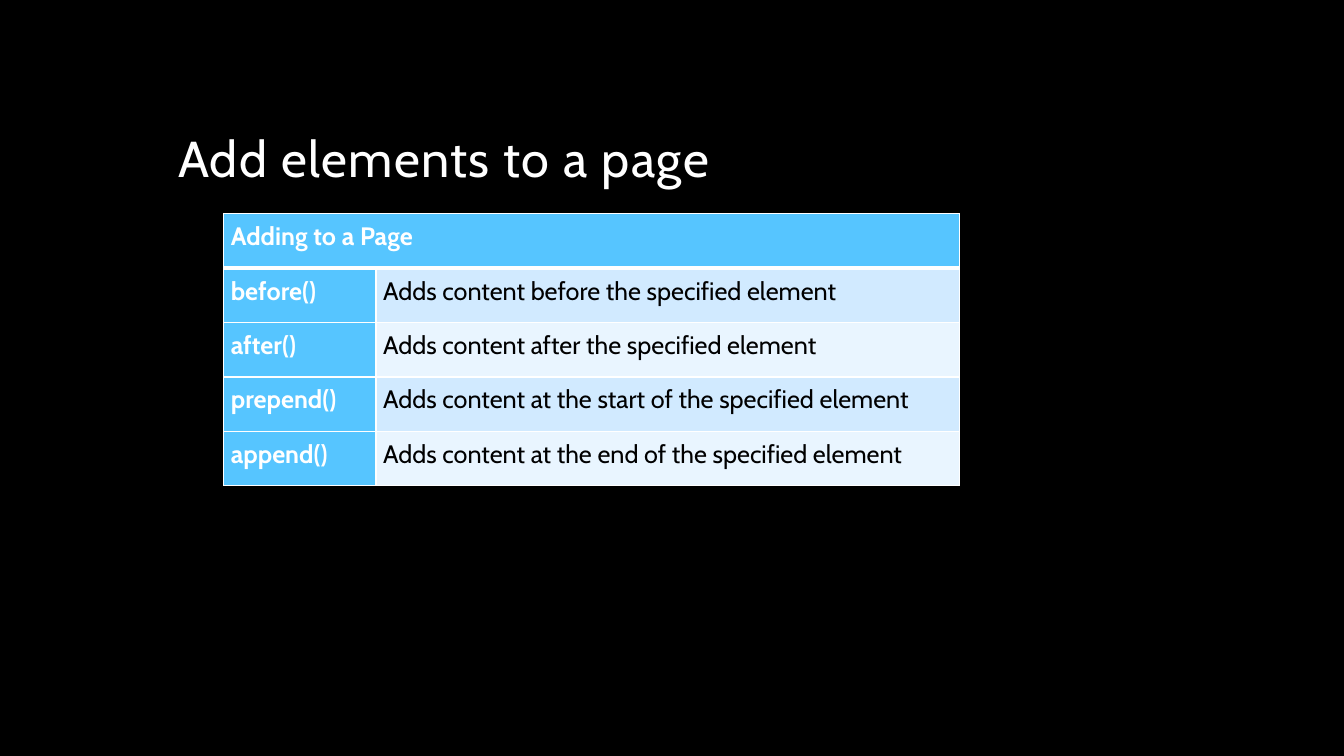
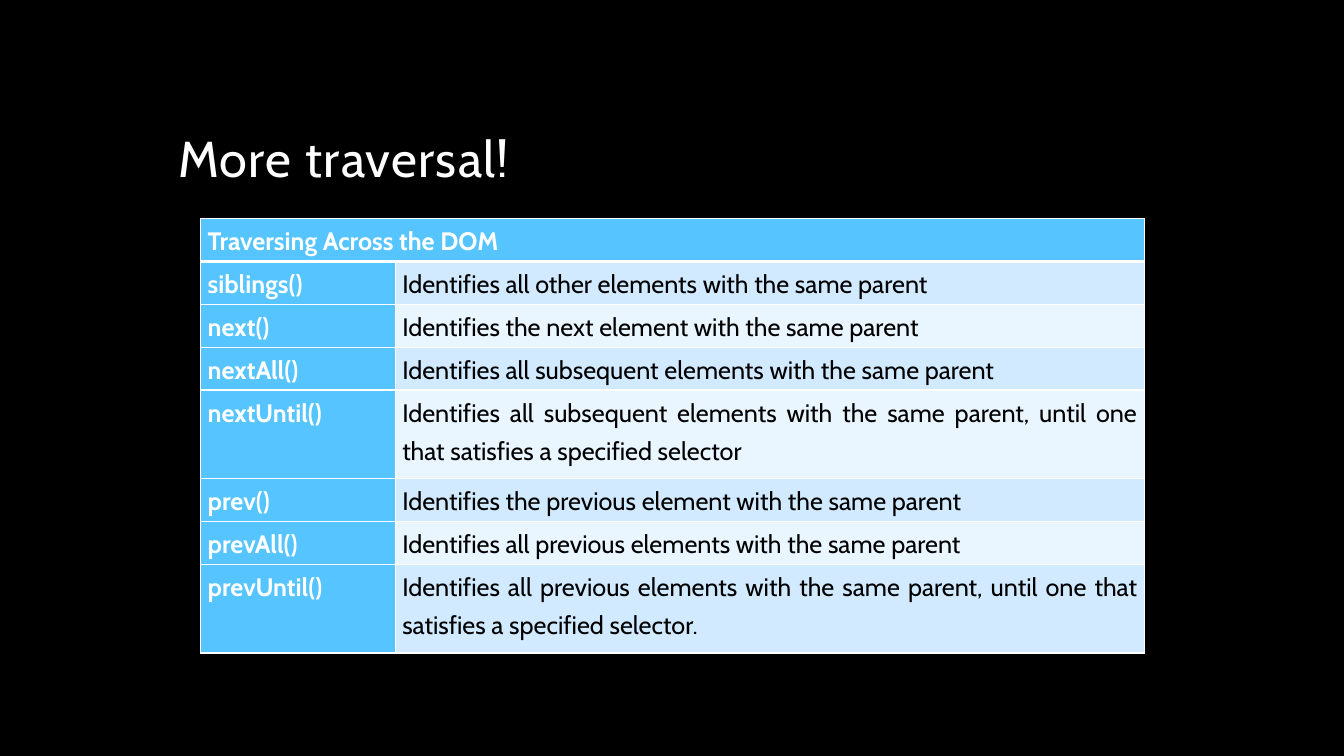
from dataclasses import dataclass

from lxml import etree
from pptx import Presentation
from pptx import util as u
from pptx.dml.color import RGBColor
from pptx.enum import text
from pptx.oxml import ns

FONT = "Cabin"
BLACK = RGBColor(0x00, 0x00, 0x00)
WHITE = RGBColor(0xFF, 0xFF, 0xFF)
BLUE = RGBColor(0x56, 0xC5, 0xFF)
BANDS = (RGBColor(0xD1, 0xEA, 0xFF), RGBColor(0xE9, 0xF5, 0xFF))

SLIDE_WIDTH, SLIDE_HEIGHT = u.Inches(13.33), u.Inches(7.5)
TITLE_ONLY = 5
THIN, THICK = 1, 3  # border widths in points

TITLE_FORMAT = {"name": FONT, "size": u.Pt(36), "bold": False}
LABEL_FORMAT = {"name": FONT, "size": u.Pt(18), "bold": True}
DETAIL_FORMAT = {"name": FONT, "size": u.Pt(18), "bold": False}
CELL_FORMAT = {
    "margin_left": u.Inches(0.07), "margin_right": u.Inches(0.07),
    "margin_top": 0, "margin_bottom": 0,
    "vertical_anchor": text.MSO_ANCHOR.TOP,
}


@dataclass(frozen=True)
class Method:
    name: str
    detail: str
    tall: bool = False


@dataclass(frozen=True)
class TableSlide:
    title: str
    heading: str
    left: float
    top: float
    columns: tuple[float, float]
    row_height: float
    methods: tuple[Method, ...]
    tall_height: float = 0.88


SLIDES = (
    TableSlide(
        "Add elements to a page", "Adding to a Page",
        2.22, 2.12, (1.51, 5.79), 0.54,
        (
            Method("before()", "Adds content before the specified element"),
            Method("after()", "Adds content after the specified element"),
            Method("prepend()", "Adds content at the start of the specified element"),
            Method("append()", "Adds content at the end of the specified element"),
        ),
    ),
    TableSlide(
        "More traversal!", "Traversing Across the DOM",
        1.99, 2.17, (1.93, 7.43), 0.425,
        (
            Method("siblings()", "Identifies all other elements with the same parent"),
            Method("next()", "Identifies the next element with the same parent"),
            Method("nextAll()", "Identifies all subsequent elements with the same parent"),
            Method("nextUntil()", "Identifies all subsequent elements with the same parent, "
                   "until one that satisfies a specified selector", tall=True),
            Method("prev()", "Identifies the previous element with the same parent"),
            Method("prevAll()", "Identifies all previous elements with the same parent"),
            Method("prevUntil()", "Identifies all previous elements with the same parent, "
                   "until one that satisfies a specified selector.", tall=True),
        ),
    ),
)


def apply_format(target, values: dict) -> None:
    for name, value in values.items():
        setattr(target, name, value)


def write(paragraph, words: str, font_format: dict, color: RGBColor):
    run = paragraph.add_run()
    run.text = words
    apply_format(run.font, font_format)
    run.font.color.rgb = color
    return run


def add_title(slide, words: str) -> None:
    title = slide.shapes.title
    apply_format(title, {
        "left": round(SLIDE_WIDTH / 8), "top": round(SLIDE_HEIGHT / 18),
        "width": round(SLIDE_WIDTH * 3 / 4), "height": round(SLIDE_HEIGHT / 5),
    })
    apply_format(title.text_frame, {
        "vertical_anchor": text.MSO_ANCHOR.BOTTOM,
        "auto_size": text.MSO_AUTO_SIZE.NONE, "word_wrap": True,
    })
    paragraph = title.text_frame.paragraphs[0]
    apply_format(paragraph, {"alignment": text.PP_ALIGN.LEFT, "line_spacing": 0.9})
    run = write(paragraph, words, TITLE_FORMAT, WHITE)
    run._r.get_or_add_rPr().set("spc", "100")


def set_borders(cell, top: int, bottom: int) -> None:
    properties = cell._tc.get_or_add_tcPr()
    for side, points in (("L", THIN), ("R", THIN), ("T", top), ("B", bottom)):
        line = etree.SubElement(properties, ns.qn(f"a:ln{side}"), w=str(u.Pt(points)))
        fill = etree.SubElement(line, ns.qn("a:solidFill"))
        etree.SubElement(fill, ns.qn("a:srgbClr"), val=str(WHITE))


def style_cell(cell, row: int, fill: RGBColor) -> None:
    # The heading is set off from the first method by a thick rule
    set_borders(cell, THICK if row == 1 else THIN, THICK if row == 0 else THIN)
    cell.fill.solid()
    cell.fill.fore_color.rgb = fill
    apply_format(cell, CELL_FORMAT)


def write_cell(cell, words: str, font_format: dict, color: RGBColor) -> None:
    paragraph = cell.text_frame.paragraphs[0]
    apply_format(paragraph, {"alignment": text.PP_ALIGN.JUSTIFY, "line_spacing": 1.25})
    write(paragraph, words, font_format, color)


def add_method_table(slide, content: TableSlide) -> None:
    heights = [content.row_height] + [
        content.tall_height if method.tall else content.row_height
        for method in content.methods
    ]
    table = slide.shapes.add_table(
        len(heights), len(content.columns),
        u.Inches(content.left), u.Inches(content.top),
        u.Inches(sum(content.columns)), u.Inches(sum(heights)),
    ).table
    for column, width in zip(table.columns, content.columns):
        column.width = u.Inches(width)
    for row, height in zip(table.rows, heights):
        row.height = u.Inches(height)

    # Heading across both columns
    for column in range(len(content.columns)):
        style_cell(table.cell(0, column), 0, BLUE)
    table.cell(0, 0).merge(table.cell(0, 1))
    write_cell(table.cell(0, 0), content.heading, LABEL_FORMAT, WHITE)

    # One row for each method, in alternating bands
    for row, method in enumerate(content.methods, start=1):
        label, detail = table.cell(row, 0), table.cell(row, 1)
        style_cell(label, row, BLUE)
        style_cell(detail, row, BANDS[(row - 1) % len(BANDS)])
        write_cell(label, method.name, LABEL_FORMAT, WHITE)
        write_cell(detail, method.detail, DETAIL_FORMAT, BLACK)


def main() -> None:
    presentation = Presentation()
    presentation.slide_width = SLIDE_WIDTH
    presentation.slide_height = SLIDE_HEIGHT

    # Shared black background
    background = presentation.slide_master.background.fill
    background.solid()
    background.fore_color.rgb = BLACK

    for content in SLIDES:
        slide = presentation.slides.add_slide(presentation.slide_layouts[TITLE_ONLY])
        add_title(slide, content.title)
        add_method_table(slide, content)
    presentation.save("out.pptx")


if __name__ == "__main__":
    main()
